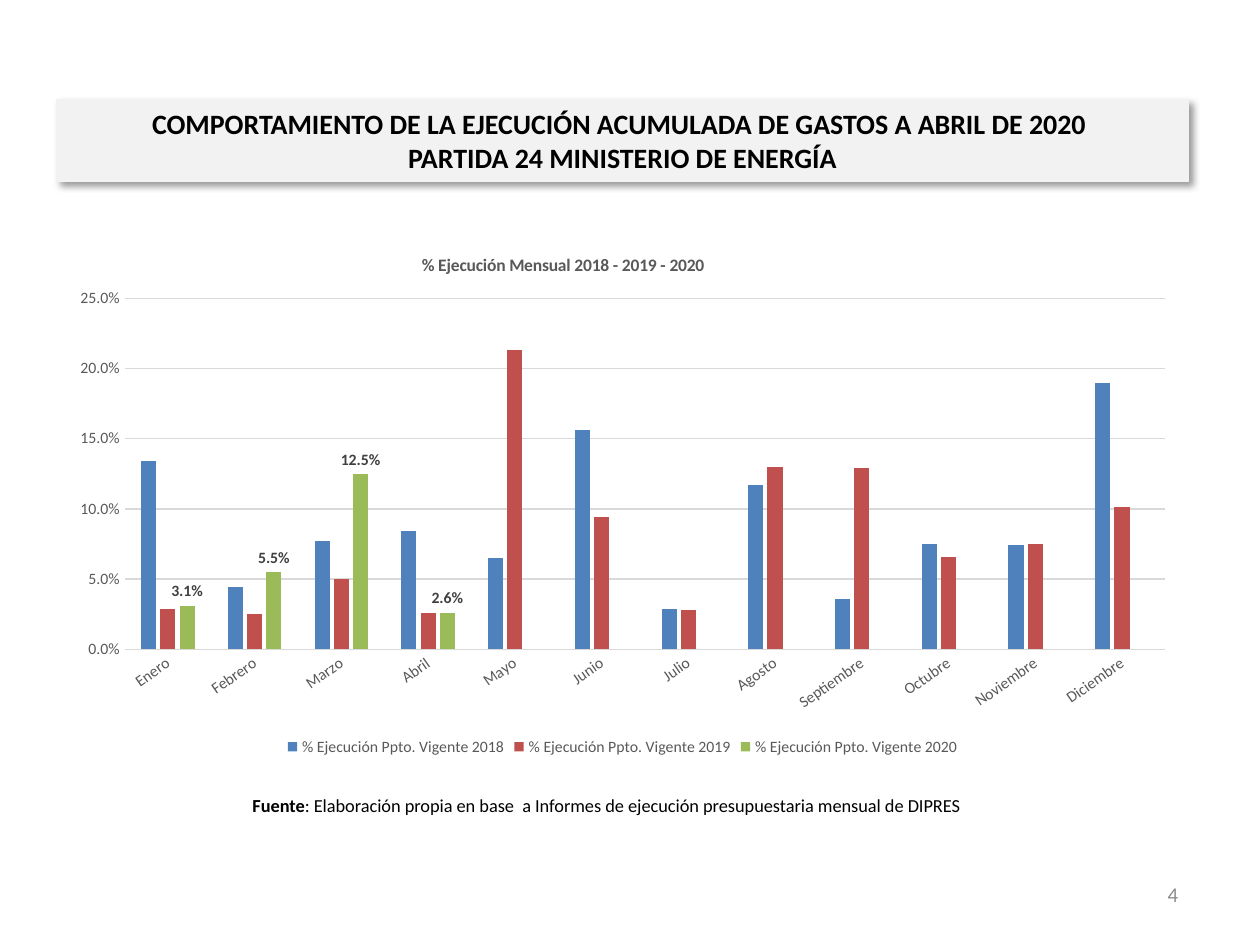
from lxml import etree
from pptx import Presentation
from pptx.chart.data import CategoryChartData
from pptx.dml.color import RGBColor
from pptx.enum.chart import XL_CHART_TYPE, XL_LABEL_POSITION, XL_LEGEND_POSITION, XL_TICK_MARK
from pptx.enum.text import MSO_ANCHOR, MSO_AUTO_SIZE, PP_ALIGN
from pptx.oxml import parse_xml
from pptx.oxml.ns import nsdecls, qn
from pptx.util import Inches, Pt

COLUMNS = XL_CHART_TYPE.COLUMN_CLUSTERED
OUTSIDE = XL_LABEL_POSITION.OUTSIDE_END
BOTTOM = XL_LEGEND_POSITION.BOTTOM
NO_TICK = XL_TICK_MARK.NONE
MIDDLE = MSO_ANCHOR.MIDDLE
FIXED = MSO_AUTO_SIZE.NONE
CENTER, RIGHT = PP_ALIGN.CENTER, PP_ALIGN.RIGHT

BLACK = RGBColor(0x00, 0x00, 0x00)
DARK = RGBColor(0x40, 0x40, 0x40)
GRAY = RGBColor(0x59, 0x59, 0x59)
MUTED = RGBColor(0x8C, 0x8C, 0x8C)
RULE = RGBColor(0xD9, 0xD9, 0xD9)
PALE = RGBColor(0xF2, 0xF2, 0xF2)
BLUE = RGBColor(0x4F, 0x81, 0xBD)
RED = RGBColor(0xC0, 0x50, 0x4D)
GREEN = RGBColor(0x9B, 0xBB, 0x59)

FONT = "Calibri"
PERCENT = "0.0%"
TITLE = ("COMPORTAMIENTO DE LA EJECUCIÓN ACUMULADA DE GASTOS A ABRIL DE 2020 \v"
         "PARTIDA 24 MINISTERIO DE ENERGÍA")
HEADING = "% Ejecución Mensual 2018 - 2019 - 2020"
SOURCE = [("Fuente", True),
          (": Elaboración propia en base  a Informes de ejecución "
           "presupuestaria mensual de DIPRES", False)]
PAGE = [("4", False)]
MONTHS = ["Enero", "Febrero", "Marzo", "Abril", "Mayo", "Junio", "Julio",
          "Agosto", "Septiembre", "Octubre", "Noviembre", "Diciembre"]
SERIES = [
    ("% Ejecución Ppto. Vigente 2018", BLUE,
     [0.134, 0.044, 0.077, 0.084, 0.065, 0.156, 0.029, 0.117, 0.036, 0.075, 0.074, 0.19]),
    ("% Ejecución Ppto. Vigente 2019", RED,
     [0.029, 0.025, 0.05, 0.026, 0.213, 0.094, 0.028, 0.13, 0.129, 0.066, 0.075, 0.101]),
    ("% Ejecución Ppto. Vigente 2020", GREEN,
     [0.031, 0.055, 0.125, 0.026] + [None] * 8),
]

LEFT, WIDTH = 0.45, 8.98
SHADOW = f"""<a:effectLst {nsdecls("a")}>
  <a:outerShdw blurRad="{Pt(4)}" dist="{Pt(3)}" dir="2700000" algn="tl" rotWithShape="0">
    <a:srgbClr val="000000"><a:alpha val="40000"/></a:srgbClr>
  </a:outerShdw></a:effectLst>"""


def style(font, size, color, bold=False):
    font.name, font.size, font.bold = FONT, Pt(size), bold
    font.color.rgb = color


def place(shape, *box):
    shape.left, shape.top, shape.width, shape.height = map(Inches, box)


def add_text(slide, box, runs, size, color, align):
    frame = slide.shapes.add_textbox(*map(Inches, box)).text_frame
    frame.word_wrap = True
    frame.vertical_anchor = MIDDLE
    para = frame.paragraphs[0]
    para.alignment = align
    for text, bold in runs:
        run = para.add_run()
        run.text = text
        style(run.font, size, color, bold)


def set_layout(node, index, **spots):
    """Fix the position of a chart part, as fractions of the chart."""
    for old in node.findall(qn("c:layout")):
        node.remove(old)
    layout = etree.Element(qn("c:layout"))
    manual = etree.SubElement(layout, qn("c:manualLayout"))
    for key, val in spots.items():
        etree.SubElement(manual, qn("c:" + key)).set("val", str(val))
    node.insert(index, layout)


def add_title(slide):
    title = slide.shapes.title
    place(title, LEFT, 0.79, WIDTH, 0.65)
    title.fill.solid()
    title.fill.fore_color.rgb = PALE
    title.line.color.rgb = PALE
    title.line.width = Pt(0.75)
    title._element.spPr.append(parse_xml(SHADOW))
    frame = title.text_frame
    frame.text = TITLE
    frame.auto_size = FIXED
    frame.word_wrap = True
    frame.vertical_anchor = MIDDLE
    para = frame.paragraphs[0]
    para.alignment = CENTER
    para.line_spacing = 1.0
    para.space_before = Pt(0)
    for run in para.runs:
        style(run.font, 16, BLACK, True)


def add_bars(slide):
    data = CategoryChartData(number_format=PERCENT)
    data.categories = MONTHS
    for name, _, vals in SERIES:
        data.add_series(name, vals)
    box = map(Inches, (LEFT, 1.82, WIDTH, 4.22))
    chart = slide.shapes.add_chart(COLUMNS, *box, data).chart
    style(chart.font, 10, BLACK)

    head = chart.chart_title
    head.text_frame.text = HEADING
    style(head.text_frame.paragraphs[0].runs[0].font, 10, GRAY, True)
    set_layout(head._element, 1, xMode="edge", yMode="edge", x=0.32, y=0.04)
    set_layout(chart._chartSpace.chart.plotArea, 0, layoutTarget="inner",
               xMode="edge", yMode="edge", x=0.06, y=0.13, w=0.92, h=0.66)

    chart.has_legend = True
    chart.legend.position = BOTTOM
    chart.legend.include_in_layout = False
    style(chart.legend.font, 9, GRAY)

    months, scale = chart.category_axis, chart.value_axis
    for axis in (months, scale):
        axis.major_tick_mark = axis.minor_tick_mark = NO_TICK
        style(axis.tick_labels.font, 9, GRAY)
    months._element.find(qn("c:txPr")).find(qn("a:bodyPr")).set("rot", "-2100000")
    scale.minimum_scale, scale.maximum_scale, scale.major_unit = 0, 0.25, 0.05
    scale.tick_labels.number_format = PERCENT
    scale.tick_labels.number_format_is_linked = False
    scale.format.line.fill.background()
    for line in (months.format.line, scale.major_gridlines.format.line):
        line.color.rgb = RULE
        line.width = Pt(0.75)

    plot = chart.plots[0]
    plot.gap_width, plot.overlap, plot.vary_by_categories = 219, -27, False
    for bars, (_, color, _) in zip(plot.series, SERIES):
        bars.invert_if_negative = False
        bars.format.fill.solid()
        bars.format.fill.fore_color.rgb = color
    labels = plot.series[-1].data_labels
    labels.show_value = True
    labels.position = OUTSIDE
    labels.number_format = PERCENT
    labels.number_format_is_linked = False
    style(labels.font, 9, DARK, True)


def main():
    deck = Presentation()
    deck.slide_width, deck.slide_height = Inches(10), Inches(7.5)
    slide = deck.slides.add_slide(deck.slide_layouts[5])
    add_title(slide)
    add_bars(slide)
    add_text(slide, (0.98, 6.19, 7.67, 0.4), SOURCE, 10.5, BLACK, CENTER)
    add_text(slide, (7.12, 6.9, 2.33, 0.4), PAGE, 12, MUTED, RIGHT)
    deck.save("out.pptx")


if __name__ == "__main__":
    main()
